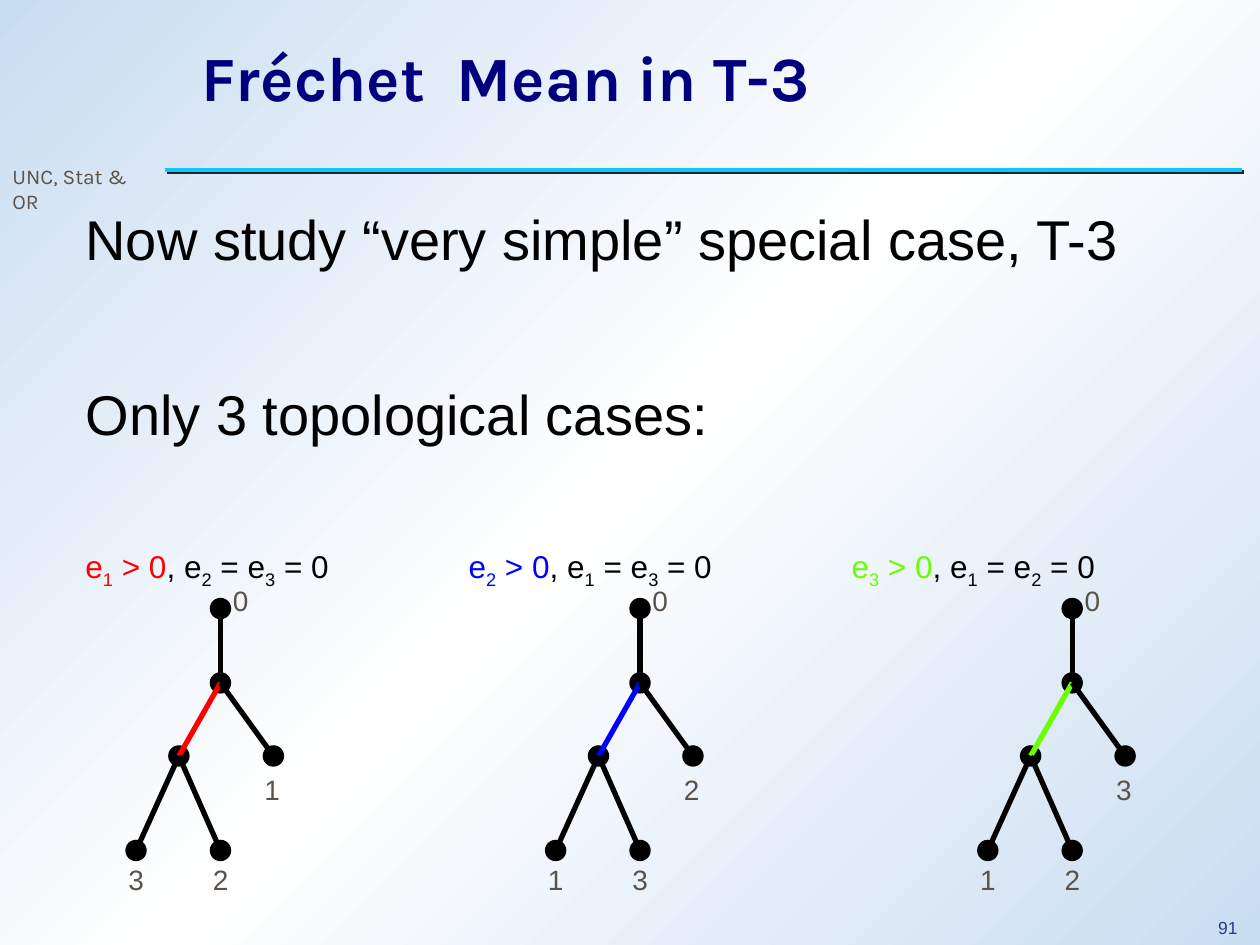
from lxml import etree
from pptx import Presentation
from pptx.dml.color import RGBColor
from pptx.enum.shapes import MSO_CONNECTOR, MSO_SHAPE
from pptx.enum.text import MSO_ANCHOR, PP_ALIGN
from pptx.oxml import parse_xml
from pptx.oxml.ns import nsdecls, qn
from pptx.util import Inches, Pt

LINE = MSO_CONNECTOR.STRAIGHT
OVAL = MSO_SHAPE.OVAL
MIDDLE = MSO_ANCHOR.MIDDLE
LEFT = PP_ALIGN.LEFT

COLORS = {
    "edge": "C9DDF1", "center": "FFFFFF", "rule": "0FC7FF", "shade": "232323",
    "title": "00007F", "page": "2A3D7A", "label": "5B5249", "ink": "000000",
    "red": "FF0000", "blue": "0000FF", "green": "69FF00",
}

# Content
TITLE = "Fréchet  Mean in T-3"
STATEMENTS = ["Now study “very simple” special case, T-3",
              "Only 3 topological cases:"]
# Root position, accent, positive edge, zero edges, outer labels left and middle
CASES = [
    (1.75, "red", "1", ("2", "3"), ("3", "2")),
    (5.08, "blue", "2", ("1", "3"), ("1", "3")),
    (8.51, "green", "3", ("1", "2"), ("1", "2")),
]

# Tree geometry: horizontal offset from the root, height on the slide
NODES = {"root": (0, 4.83), "fork": (0, 5.42), "inner": (-0.33, 6),
         "left": (-0.67, 6.75), "right": (0.42, 6), "middle": (0, 6.75)}
EDGES = [("root", "fork"), ("fork", "inner"), ("inner", "middle"),
         ("inner", "left"), ("fork", "right")]
ACCENT_EDGE = ("fork", "inner")
LABEL_OFFSETS = {"root": (0, -0.25), "right": (-0.17, 0.08),
                 "middle": (-0.16, 0.05), "left": (-0.16, 0.05)}
DOT = 0.17
CAPTION_STEP = 3.04


def add_span(para, text, size=16, color="label", font="Arial", bold=False, subscript=False):
    span = para.add_run()
    span.text = text
    span.font.size = Pt(size)
    span.font.name = font
    span.font.bold = bold
    span.font.color.rgb = RGBColor.from_string(COLORS[color])
    if subscript:
        span.font._element.set("baseline", "-25000")


def add_box(page, left, top, width, height, wrap=True):
    box = page.shapes.add_textbox(Inches(left), Inches(top), Inches(width), Inches(height))
    box.text_frame.word_wrap = wrap
    return box.text_frame


def add_line(page, start, end, color, width):
    line = page.shapes.add_connector(LINE, *(Inches(value) for value in (*start, *end)))
    line.line.color.rgb = RGBColor.from_string(COLORS[color])
    line.line.width = Pt(width)
    return etree.SubElement(line._element.spPr, qn("a:effectLst"))


def set_background(page):
    fill = page.background.fill
    fill.gradient()
    fill.gradient_angle = 315
    stops = fill._fill._gradFill.find(qn("a:gsLst"))
    for stop in list(stops):
        stops.remove(stop)
    for share, color in ((0, "edge"), (50, "center"), (100, "edge")):
        stops.append(parse_xml(
            f'<a:gs {nsdecls("a")} pos="{share * 1000}">'
            f'<a:srgbClr val="{COLORS[color]}"/></a:gs>'))


def add_caption(para, accent, positive, zeros):
    style = {"size": 18, "color": accent}
    add_span(para, "e", **style)
    add_span(para, positive, subscript=True, **style)
    add_span(para, " > 0", **style)
    style["color"] = "ink"
    for lead, index in zip((", e", " = e"), zeros):
        add_span(para, lead, **style)
        add_span(para, index, subscript=True, **style)
    add_span(para, " = 0", **style)


def add_body(page):
    frame = add_box(page, 0.58, 1.42, 9.08, 3.3)
    frame.margin_top = Inches(0.04)
    para = frame.paragraphs[0]
    for text in STATEMENTS:
        para.line_spacing = 1.3
        para.space_after = Pt(50.2)
        add_span(para, text, size=32, color="ink")
        para = frame.add_paragraph()
    # Captions in three columns set by tab stops
    para.line_spacing = 1.3
    tabs = etree.SubElement(para._p.get_or_add_pPr(), qn("a:tabLst"))
    for column, (_, accent, positive, zeros, _) in enumerate(CASES):
        if column:
            etree.SubElement(tabs, qn("a:tab"), algn="l",
                             pos=str(Inches(column * CAPTION_STEP)))
            add_span(para, "\t", size=18, color="ink")
        add_caption(para, accent, positive, zeros)


def add_tree(page, root_x, accent, positive, outer):
    spots = {name: (root_x + dx, y) for name, (dx, y) in NODES.items()}
    for x, y in spots.values():
        dot = page.shapes.add_shape(OVAL, Inches(x - DOT / 2), Inches(y - DOT / 2),
                                    Inches(DOT), Inches(DOT))
        dot.shadow.inherit = False
        dot.fill.solid()
        dot.fill.fore_color.rgb = RGBColor.from_string(COLORS["ink"])
        dot.line.fill.background()
    for edge in EDGES:
        color = accent if edge == ACCENT_EDGE else "ink"
        add_line(page, spots[edge[0]], spots[edge[1]], color, 3)
    labels = {"root": "0", "right": positive, "left": outer[0], "middle": outer[1]}
    for name, text in labels.items():
        x, y = spots[name]
        dx, dy = LABEL_OFFSETS[name]
        frame = add_box(page, x + dx, y + dy, 0.32, 0.37, wrap=False)
        add_span(frame.paragraphs[0], text)


def main():
    deck = Presentation()
    deck.slide_width, deck.slide_height = Inches(10), Inches(7.5)
    page = deck.slides.add_slide(deck.slide_layouts[5])
    set_background(page)

    # Title
    title = page.shapes.title
    title.left, title.top, title.width, title.height = (
        Inches(value) for value in (1.5, 0.17, 8.08, 0.87))
    title.text_frame.vertical_anchor = MIDDLE
    para = title.text_frame.paragraphs[0]
    para.alignment = LEFT
    add_span(para, TITLE, size=36, color="title", font="Karla", bold=True)

    # Header rule with a hard shadow
    effects = add_line(page, (1.31, 1.35), (9.86, 1.35), "rule", 2.25)
    shadow = etree.SubElement(effects, qn("a:outerShdw"), blurRad="0",
                              dist=str(Pt(1.4)), dir="2700000")
    etree.SubElement(shadow, qn("a:srgbClr"), val=COLORS["shade"])

    # Department and page number
    frame = add_box(page, 0, 1.25, 1.35, 0.3)
    add_span(frame.paragraphs[0], "UNC, Stat & OR", size=12, font="Karla")
    frame = add_box(page, 9.57, 7.25, 0.37, 0.25, wrap=False)
    frame.paragraphs[0].line_spacing = 0.9
    add_span(frame.paragraphs[0], "91", size=10, color="page")

    # Statements, captions and trees
    add_body(page)
    for root_x, accent, positive, _, outer in CASES:
        add_tree(page, root_x, accent, positive, outer)
    deck.save("out.pptx")


if __name__ == "__main__":
    main()
